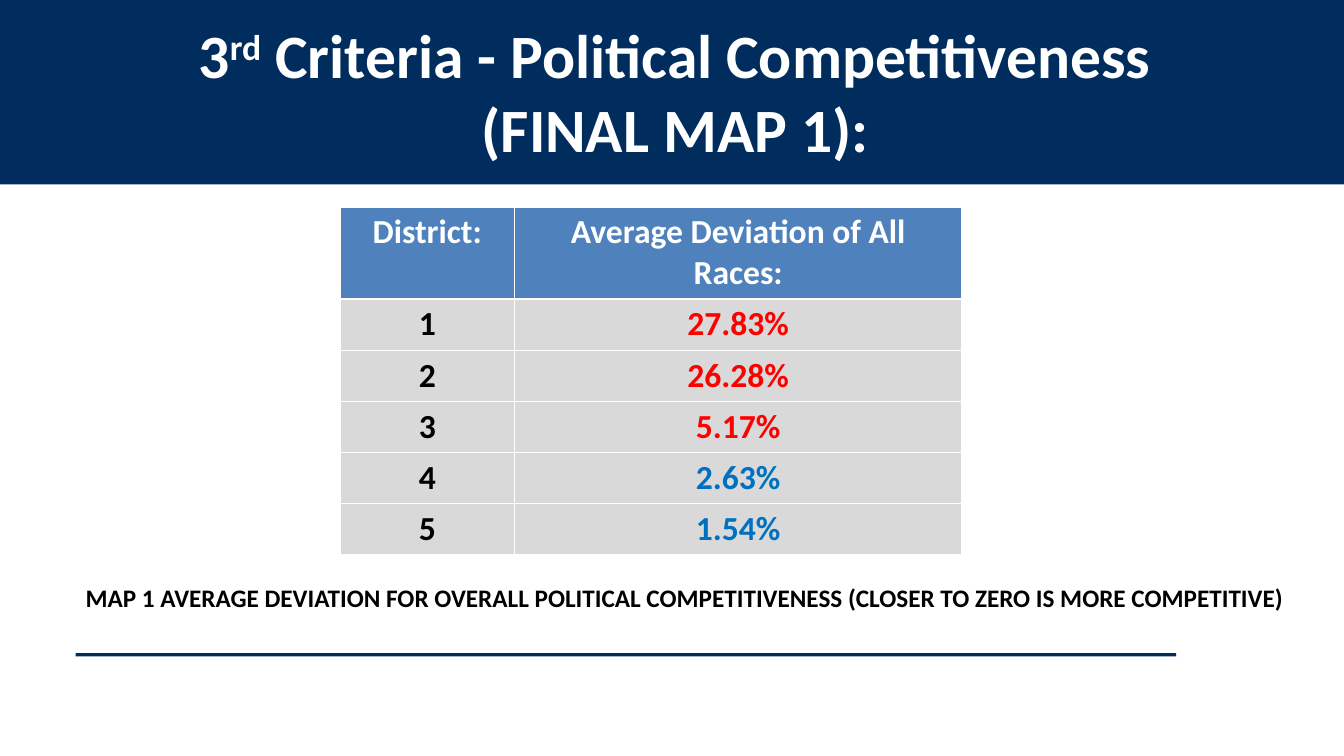
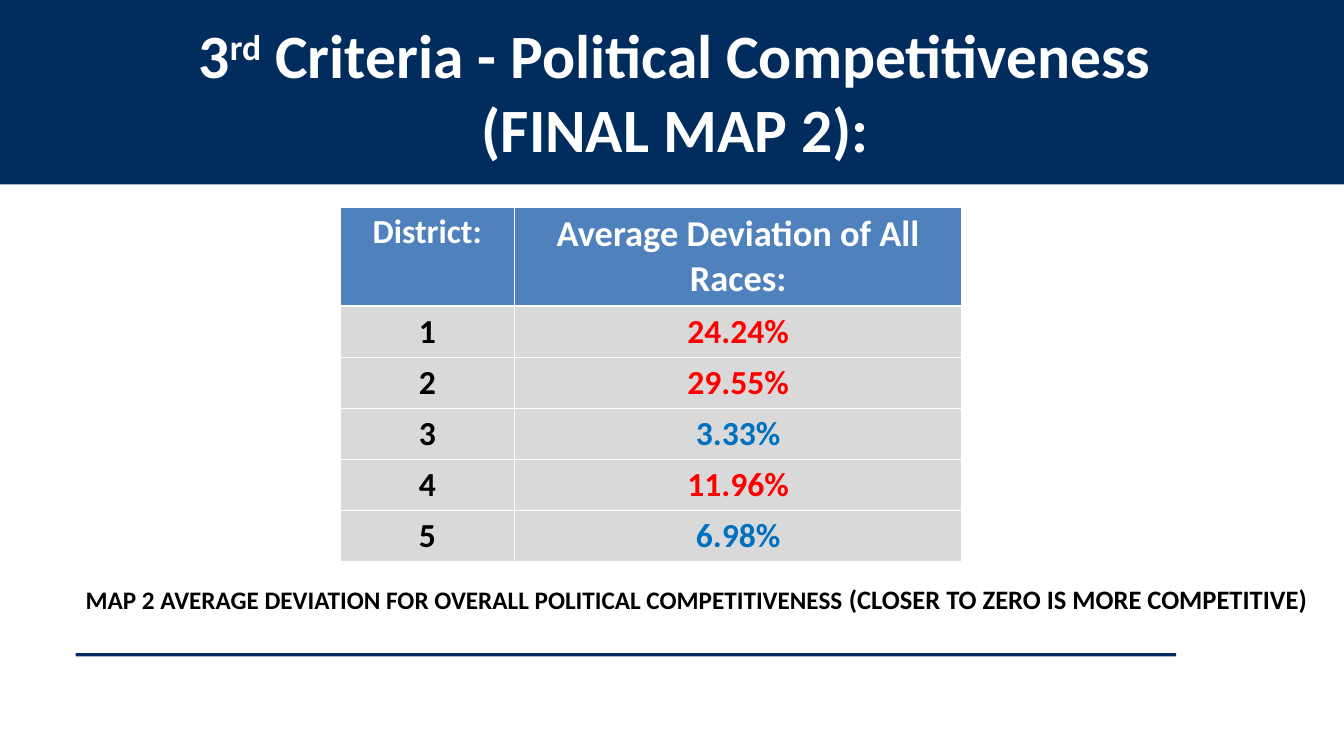
from dataclasses import dataclass

from pptx import Presentation
from pptx.dml.color import RGBColor as Rgb
from pptx.enum.shapes import MSO_SHAPE as Shape
from pptx.enum.text import MSO_ANCHOR as Anchor, MSO_AUTO_SIZE as Fit, PP_ALIGN as Align
from pptx.util import Pt


@dataclass(frozen=True)
class Theme:
    font: str = "Calibri"
    navy: str = "002D5D"
    blue: str = "4F81BD"
    gray: str = "D9D9D9"
    white: str = "FFFFFF"
    black: str = "000000"
    far: str = "FF0000"
    near: str = "0070C0"
    title: int = 44
    cell: int = 24
    note: int = 18


@dataclass(frozen=True)
class Rate:
    value: str
    near: bool = False


@dataclass(frozen=True)
class Page:
    number: int
    head: str
    head_size: int
    tail: str
    tail_size: int
    rates: tuple[Rate, ...]


THEME = Theme()
COLS = (124.6, 319.7)
ROWS = (61.9, 36)

PAGES = (
    Page(1, "Average Deviation of All Races:", 24,
         " (CLOSER TO ZERO IS MORE COMPETITIVE)", 18,
         (Rate("27.83%"), Rate("26.28%"), Rate("5.17%"),
          Rate("2.63%", True), Rate("1.54%", True))),
    Page(2, "Average Deviation of All Races:", 26,
         " (CLOSER TO ZERO IS MORE COMPETITIVE)", 19,
         (Rate("24.24%"), Rate("29.55%"), Rate("3.33%", True),
          Rate("11.96%"), Rate("6.98%", True))),
)


def write(para, text: str, *, size: int, color: str, align=None, rise: int = 0) -> None:
    """Add one bold run to a paragraph; rise is a percentage."""
    if align is not None:
        para.alignment = align
    run = para.add_run()
    run.text = text
    font = run.font
    font.name, font.size, font.bold = THEME.font, Pt(size), True
    font.color.rgb = Rgb.from_string(color)
    if rise:
        run._r.get_or_add_rPr().set("baseline", str(rise * 1000))


def bar(slide, left: float, top: float, width: float, height: float) -> None:
    shape = slide.shapes.add_shape(Shape.RECTANGLE, Pt(left), Pt(top), Pt(width), Pt(height))
    shape.shadow.inherit = False
    shape.fill.solid()
    shape.fill.fore_color.rgb = Rgb.from_string(THEME.navy)
    shape.line.fill.background()


def title(slide, number: int) -> None:
    box = slide.shapes.title
    box.left, box.top, box.width, box.height = Pt(76.3), Pt(8.6), Pt(812.2), Pt(123)
    frame = box.text_frame
    frame.word_wrap, frame.auto_size = True, Fit.NONE
    frame.vertical_anchor = Anchor.TOP
    look = dict(size=THEME.title, color=THEME.white, align=Align.CENTER)
    first = frame.paragraphs[0]
    write(first, "3", **look)
    write(first, "rd", rise=30, **look)
    write(first, " Criteria - Political Competitiveness", **look)
    write(frame.add_paragraph(), f"(FINAL MAP {number}):", **look)
    # Bring the title in front of the band
    slide.shapes._spTree.append(box._element)


def fill(cell, text: str, *, back: str, color: str, size: int = THEME.cell) -> None:
    cell.fill.solid()
    cell.fill.fore_color.rgb = Rgb.from_string(back)
    write(cell.text_frame.paragraphs[0], text, size=size, color=color, align=Align.CENTER)


def grid(slide, page: Page) -> None:
    count = len(page.rates)
    table = slide.shapes.add_table(
        count + 1, len(COLS), Pt(242.9), Pt(147.8),
        Pt(sum(COLS)), Pt(ROWS[0] + ROWS[1] * count)).table
    table.horz_banding = False
    for col, width in zip(table.columns, COLS):
        col.width = Pt(width)
    for index, row in enumerate(table.rows):
        row.height = Pt(ROWS[min(index, 1)])
    # Header row
    fill(table.cell(0, 0), "District:", back=THEME.blue, color=THEME.white)
    fill(table.cell(0, 1), page.head, back=THEME.blue, color=THEME.white, size=page.head_size)
    # One row per district
    for index, rate in enumerate(page.rates, 1):
        fill(table.cell(index, 0), str(index), back=THEME.gray, color=THEME.black)
        fill(table.cell(index, 1), rate.value, back=THEME.gray,
             color=THEME.near if rate.near else THEME.far)


def note(slide, page: Page) -> None:
    box = slide.shapes.add_textbox(Pt(54), Pt(412.6), Pt(896), Pt(30))
    frame = box.text_frame
    frame.word_wrap = True
    para = frame.paragraphs[0]
    write(para, f"MAP {page.number} AVERAGE DEVIATION FOR OVERALL POLITICAL COMPETITIVENESS",
          size=THEME.note, color=THEME.black)
    write(para, page.tail, size=page.tail_size, color=THEME.black)


def build(deck, page: Page) -> None:
    slide = deck.slides.add_slide(deck.slide_layouts.get_by_name("Title Only"))
    # Top band and bottom rule
    bar(slide, 0, 0, 960, 131.8)
    bar(slide, 54, 466.6, 786.2, 2.2)
    title(slide, page.number)
    grid(slide, page)
    note(slide, page)


def main() -> None:
    deck = Presentation()
    deck.slide_width, deck.slide_height = Pt(960), Pt(540)
    for page in PAGES:
        build(deck, page)
    deck.save("out.pptx")


if __name__ == "__main__":
    main()
